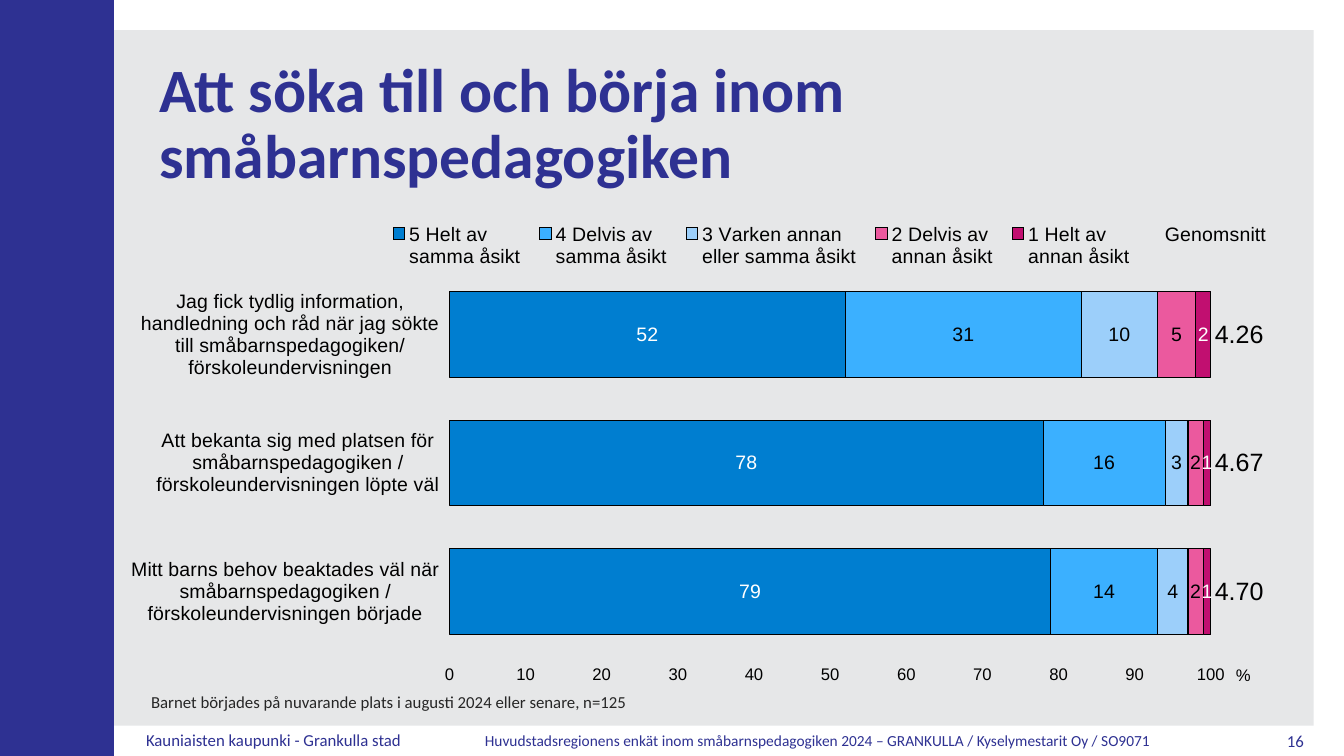
from lxml import etree
from pptx import Presentation
from pptx.chart.data import CategoryChartData
from pptx.dml.color import RGBColor
from pptx.enum.chart import (XL_CHART_TYPE, XL_LABEL_POSITION, XL_LEGEND_POSITION,
                             XL_TICK_LABEL_POSITION, XL_TICK_MARK)
from pptx.enum.shapes import MSO_SHAPE
from pptx.enum.text import MSO_ANCHOR, PP_ALIGN
from pptx.oxml.ns import qn
from pptx.util import Inches, Pt

BLACK = RGBColor(0, 0, 0)
WHITE = RGBColor(255, 255, 255)
NAVY = RGBColor(0x2E, 0x31, 0x92)
GREY = RGBColor(0xE6, 0xE7, 0xE8)
DARK = RGBColor(0x26, 0x26, 0x26)
BLUE = RGBColor(0x00, 0x7E, 0xD0)
SKY = RGBColor(0x3B, 0xB0, 0xFF)
PALE = RGBColor(0x9C, 0xCF, 0xFA)
PINK = RGBColor(0xEB, 0x59, 0x9E)
WINE = RGBColor(0xC1, 0x0F, 0x70)
LEFT, RIGHT = PP_ALIGN.LEFT, PP_ALIGN.RIGHT
TOP, MIDDLE = MSO_ANCHOR.TOP, MSO_ANCHOR.MIDDLE
LOW, HIGH = XL_TICK_LABEL_POSITION.LOW, XL_TICK_LABEL_POSITION.HIGH
NO_TICK = XL_TICK_MARK.NONE

PANELS = [((0.3, 0.3, 12.73, 6.9), GREY), ((0, 0, 1.13, 7.5), NAVY)]
TEXTS = [
    ("Att söka till och börja inom småbarnspedagogiken", (1.48, 0.52, 11.5, 1.45),
     dict(size=44, bold=True, anchor=MIDDLE)),
    ("Barnet börjades på nuvarande plats i augusti 2024 eller senare, n=125",
     (1.4, 6.84, 9.18, 0.28), dict(color=DARK)),
    ("Kauniaisten kaupunki - Grankulla stad", (1.35, 7.23, 2.88, 0.28), dict(space=0.8)),
    ("Huvudstadsregionens enkät inom småbarnspedagogiken 2024 – GRANKULLA / "
     "Kyselymestarit Oy / SO9071", (4.71, 7.22, 7.05, 0.28), dict(size=11)),
    ("16", (12.29, 7.2, 0.74, 0.3), dict(align=RIGHT, anchor=MIDDLE, space=1)),
]
CLAIMS = [
    "Jag fick tydlig information, handledning och råd när jag sökte "
    "till småbarnspedagogiken/förskoleundervisningen",
    "Att bekanta sig med platsen för småbarnspedagogiken / "
    "förskoleundervisningen löpte väl",
    "Mitt barns behov beaktades väl när småbarnspedagogiken / "
    "förskoleundervisningen började",
]
SERIES = [
    ("5 Helt av \nsamma åsikt", (52, 78, 79), BLUE, WHITE),
    ("4 Delvis av\nsamma åsikt", (31, 16, 14), SKY, BLACK),
    ("3 Varken annan\neller samma åsikt", (10, 3, 4), PALE, BLACK),
    ("2 Delvis av\nannan åsikt", (5, 2, 2), PINK, BLACK),
    ("1 Helt av\nannan åsikt", (2, 1, 1), WINE, WHITE),
    ("Genomsnitt", (4.26, 4.67, 4.7), None, BLACK),
]
CHART = (1.3, 2.08, 11.5, 4.76)
PLOT = dict(x=0.27, y=0.126, w=0.661, h=0.808)
KEY = dict(x=0.21, y=0.02, w=0.78, h=0.11)
UNIT = dict(x=0.95, y=0.945)


def add_text(slide, text, box, size=12, color=NAVY, bold=False, align=LEFT,
             anchor=TOP, space=0.9):
    frame = slide.shapes.add_textbox(*map(Inches, box)).text_frame
    frame.word_wrap = True
    frame.vertical_anchor = anchor
    para = frame.paragraphs[0]
    para.text = text
    para.alignment = align
    para.line_spacing = space
    style(para.font, size, color, "Calibri", bold)


def style(font, size, color, name="Arial", bold=False):
    font.size = Pt(size)
    font.name = name
    font.bold = bold
    font.color.rgb = color


def place(part, index, shares, inner=False):
    for old in part.findall(qn("c:layout")):
        part.remove(old)
    layout = etree.Element(qn("c:layout"))
    manual = etree.SubElement(layout, qn("c:manualLayout"))
    rules = [("layoutTarget", "inner")] if inner else []
    rules += [("xMode", "edge"), ("yMode", "edge")]
    rules += [(key, str(share)) for key, share in shares.items()]
    for tag, val in rules:
        etree.SubElement(manual, qn("c:" + tag)).set("val", val)
    part.insert(index, layout)


def add_bars(slide):
    data = CategoryChartData()
    data.categories = CLAIMS
    for name, vals, fill, ink in SERIES:
        data.add_series(name, vals)
    chart = slide.shapes.add_chart(XL_CHART_TYPE.BAR_STACKED,
                                   *map(Inches, CHART), data).chart
    chart.has_title = False
    style(chart.font, 14, BLACK)
    bars = chart.plots[0]
    bars.gap_width, bars.overlap, bars.vary_by_categories = 50, 100, False

    for row, (name, vals, fill, ink) in zip(bars.series, SERIES):
        labels = row.data_labels
        labels.show_value = True
        labels.number_format_is_linked = False
        if fill is None:
            row.format.fill.background()
            row.format.line.fill.background()
            labels.number_format = "#,##0.00"
            labels.position = XL_LABEL_POSITION.INSIDE_BASE
        else:
            row.format.fill.solid()
            row.format.fill.fore_color.rgb = fill
            row.format.line.color.rgb = BLACK
            row.format.line.width = Pt(0.75)
            labels.number_format = "#,##0"
            labels.position = XL_LABEL_POSITION.CENTER
        style(labels.font, 18 if fill is None else 14, ink)

    cats, scale = chart.category_axis, chart.value_axis
    for axis, size, side in ((cats, 14, LOW), (scale, 12, HIGH)):
        axis.major_tick_mark = axis.minor_tick_mark = NO_TICK
        axis.tick_label_position = side
        axis.has_major_gridlines = False
        axis.format.line.fill.background()
        style(axis.tick_labels.font, size, BLACK)
    cats.reverse_order = True
    scale.minimum_scale, scale.maximum_scale, scale.major_unit = 0, 100.01, 10
    scale.tick_labels.number_format = "General"
    scale.tick_labels.number_format_is_linked = False

    title = scale.axis_title
    title.text_frame.text = "%"
    style(title.text_frame.paragraphs[0].runs[0].font, 12, BLACK)
    chart.has_legend = True
    legend = chart.legend
    legend.position = XL_LEGEND_POSITION.TOP
    legend.include_in_layout = False
    style(legend.font, 14, BLACK)
    area = chart.element.find(".//" + qn("c:plotArea"))
    place(area, 0, PLOT, inner=True)
    place(chart.element.find(".//" + qn("c:legend")), 1, KEY)
    place(area.find(qn("c:valAx")).find(qn("c:title")), 1, UNIT)


def main():
    deck = Presentation()
    deck.slide_width, deck.slide_height = Inches(13.33), Inches(7.5)
    slide = deck.slides.add_slide(deck.slide_layouts[6])
    for box, fill in PANELS:
        panel = slide.shapes.add_shape(MSO_SHAPE.RECTANGLE, *map(Inches, box))
        panel.shadow.inherit = False
        panel.fill.solid()
        panel.fill.fore_color.rgb = fill
        panel.line.fill.background()
    add_bars(slide)
    for text, box, form in TEXTS:
        add_text(slide, text, box, **form)
    deck.save("out.pptx")


if __name__ == "__main__":
    main()
